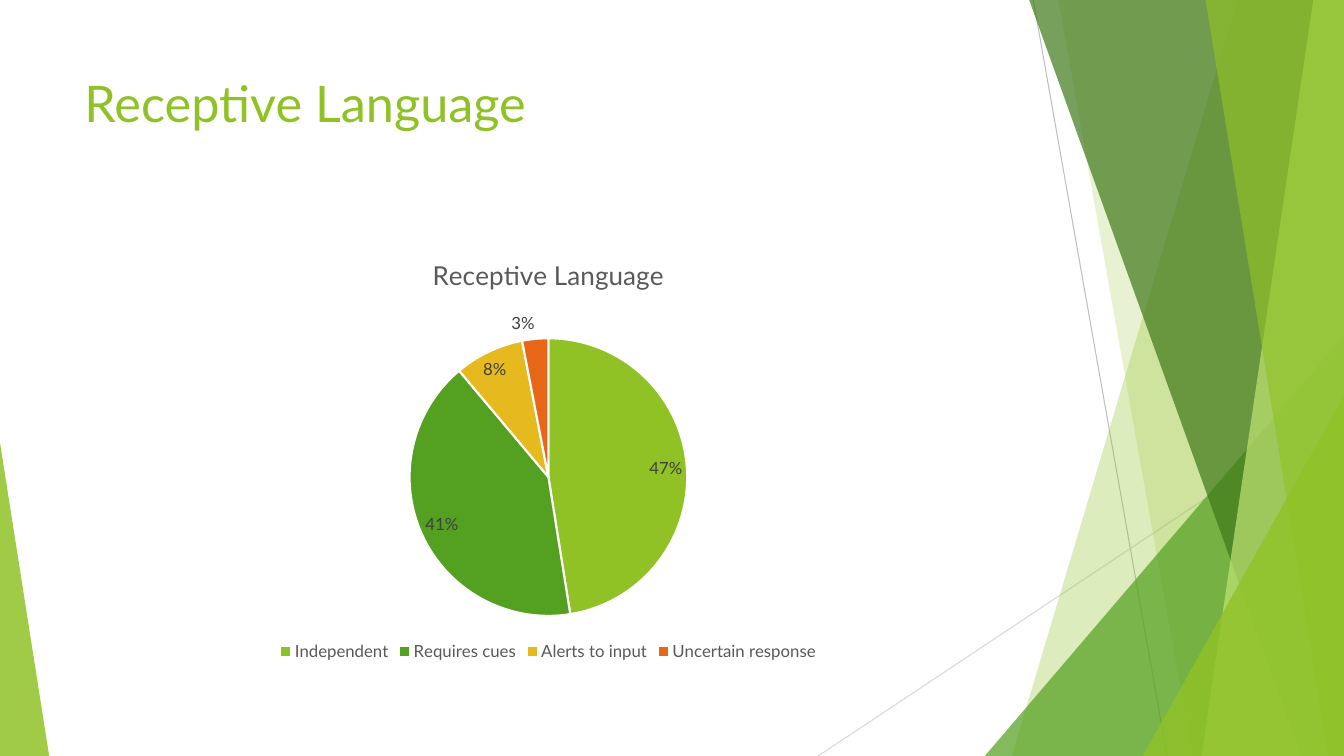
from dataclasses import dataclass

from lxml.etree import SubElement
from pptx import Presentation
from pptx.chart.data import CategoryChartData
from pptx.dml.color import RGBColor
from pptx.enum.chart import XL_CHART_TYPE, XL_LABEL_POSITION, XL_LEGEND_POSITION
from pptx.enum.shapes import MSO_CONNECTOR, MSO_SHAPE
from pptx.enum.text import MSO_ANCHOR
from pptx.oxml.ns import qn
from pptx.util import Cm, Pt

WIDTH, HEIGHT = 33.87, 19.05


@dataclass(frozen=True)
class Theme:
    font: str = "Lato"
    paper: str = "FFFFFF"
    lime: str = "90C226"
    green: str = "54A021"
    forest: str = "3F7819"
    pale: str = "C0E474"
    gold: str = "E6B91E"
    orange: str = "E76618"
    steep_line: str = "BFBFBF"
    flat_line: str = "D9D9D9"
    caption: str = "595959"
    label: str = "404040"
    heading_size: float = 36
    chart_title_size: float = 18.6
    chart_size: float = 12


def set_values(target, values):
    for name, value in values.items():
        setattr(target, name, value)


class SlideBuilder:
    def __init__(self, slide, theme):
        self.shapes = slide.shapes
        self.theme = theme

    def style_font(self, font, size, color):
        set_values(font, {"name": self.theme.font, "size": Pt(size), "bold": False})
        font.color.rgb = RGBColor.from_string(color)

    def tint(self, facet, color, opacity):
        facet.shadow.inherit = False
        facet.fill.solid()
        facet.fill.fore_color.rgb = RGBColor.from_string(color)
        facet.line.fill.background()
        shade = facet._element.spPr.find(qn("a:solidFill")).find(qn("a:srgbClr"))
        SubElement(shade, qn("a:alpha")).set("val", str(opacity * 1000))

    def line(self, start, end, color):
        ray = self.shapes.add_connector(
            MSO_CONNECTOR.STRAIGHT, *(Cm(v) for v in start + end))
        ray.line.color.rgb = RGBColor.from_string(color)
        ray.line.width = Pt(0.75)
        SubElement(ray._element.spPr, qn("a:effectLst"))

    def band(self, top_x, bottom_x, color, opacity):
        """Fill from a slanted left edge to the right side of the slide."""
        corners = [(top_x, -0.02), (WIDTH, -0.02), (WIDTH, HEIGHT), (bottom_x, HEIGHT)]
        first, *rest = [(Cm(x), Cm(y)) for x, y in corners]
        outline = self.shapes.build_freeform(*first)
        outline.add_line_segments(rest, close=True)
        self.tint(outline.convert_to_shape(), color, opacity)

    def triangle(self, left, top, width, apex, color, opacity):
        """Triangle standing on the bottom of the slide."""
        facet = self.shapes.add_shape(
            MSO_SHAPE.ISOSCELES_TRIANGLE,
            Cm(left), Cm(top), Cm(width), Cm(HEIGHT - top))
        facet.adjustments[0] = apex
        self.tint(facet, color, opacity)

    def heading(self, text, box):
        frame = self.shapes.add_textbox(*(Cm(v) for v in box)).text_frame
        set_values(frame, {"word_wrap": True, "vertical_anchor": MSO_ANCHOR.TOP})
        run = frame.paragraphs[0].add_run()
        run.text = text
        self.style_font(run.font, self.theme.heading_size, self.theme.lime)

    def pie(self, title, shares, box):
        """Pie from a dict of category: (value, colour)."""
        theme = self.theme
        data = CategoryChartData()
        data.categories = list(shares)
        data.add_series(title, [value for value, _ in shares.values()])
        chart = self.shapes.add_chart(
            XL_CHART_TYPE.PIE, *(Cm(v) for v in box), data).chart
        self.style_font(chart.font, theme.chart_size, theme.caption)

        # Chart title and legend
        chart.has_title = True
        chart.chart_title.include_in_layout = False
        caption = chart.chart_title.text_frame.paragraphs[0].add_run()
        caption.text = title
        self.style_font(caption.font, theme.chart_title_size, theme.caption)
        chart.has_legend = True
        set_values(chart.legend, {
            "position": XL_LEGEND_POSITION.BOTTOM, "include_in_layout": False})
        self.style_font(chart.legend.font, theme.chart_size, theme.caption)

        # Slices and percentages
        plot = chart.plots[0]
        set_values(plot, {"vary_by_categories": True, "has_data_labels": True})
        set_values(plot.data_labels, {
            "show_percentage": True, "show_value": False,
            "number_format": "0%", "number_format_is_linked": False,
            "position": XL_LABEL_POSITION.BEST_FIT})
        self.style_font(plot.data_labels.font, theme.chart_size, theme.label)
        for index, (_, color) in enumerate(shares.values()):
            wedge = plot.series[0].points[index].format
            wedge.fill.solid()
            wedge.fill.fore_color.rgb = RGBColor.from_string(color)
            wedge.line.color.rgb = RGBColor.from_string(theme.paper)
            wedge.line.width = Pt(1.5)


def main():
    theme = Theme()
    deck = Presentation()
    set_values(deck, {"slide_width": Cm(WIDTH), "slide_height": Cm(HEIGHT)})
    page = SlideBuilder(deck.slides.add_slide(deck.slide_layouts[6]), theme)

    # Faceted backdrop, from back to front
    page.line((26.04, 0), (29.41, HEIGHT), theme.steep_line)
    page.line((WIDTH, 10.24), (20.62, HEIGHT), theme.flat_line)
    page.band(31.19, 25.5, theme.lime, 30)
    page.band(26.67, 30.05, theme.lime, 20)
    page.triangle(24.82, 8.46, 9.05, 1, theme.green, 72)
    page.band(25.93, 32.79, theme.forest, 70)
    page.band(33.1, 30.28, theme.pale, 70)
    page.band(30.38, 33.48, theme.lime, 65)
    page.triangle(28.8, 9.98, 5.07, 1, theme.lime, 80)
    page.triangle(0, 11.15, 1.24, 0, theme.lime, 85)

    # Heading and chart
    topic = "Receptive Language"
    page.heading(topic, (1.88, 1.7, 23.88, 3.66))
    page.pie(topic, {
        "Independent": (47, theme.lime),
        "Requires cues": (41, theme.green),
        "Alerts to input": (8, theme.gold),
        "Uncertain response": (3, theme.orange),
    }, (1.88, 5.99, 23.88, 10.77))

    deck.save("out.pptx")


if __name__ == "__main__":
    main()
